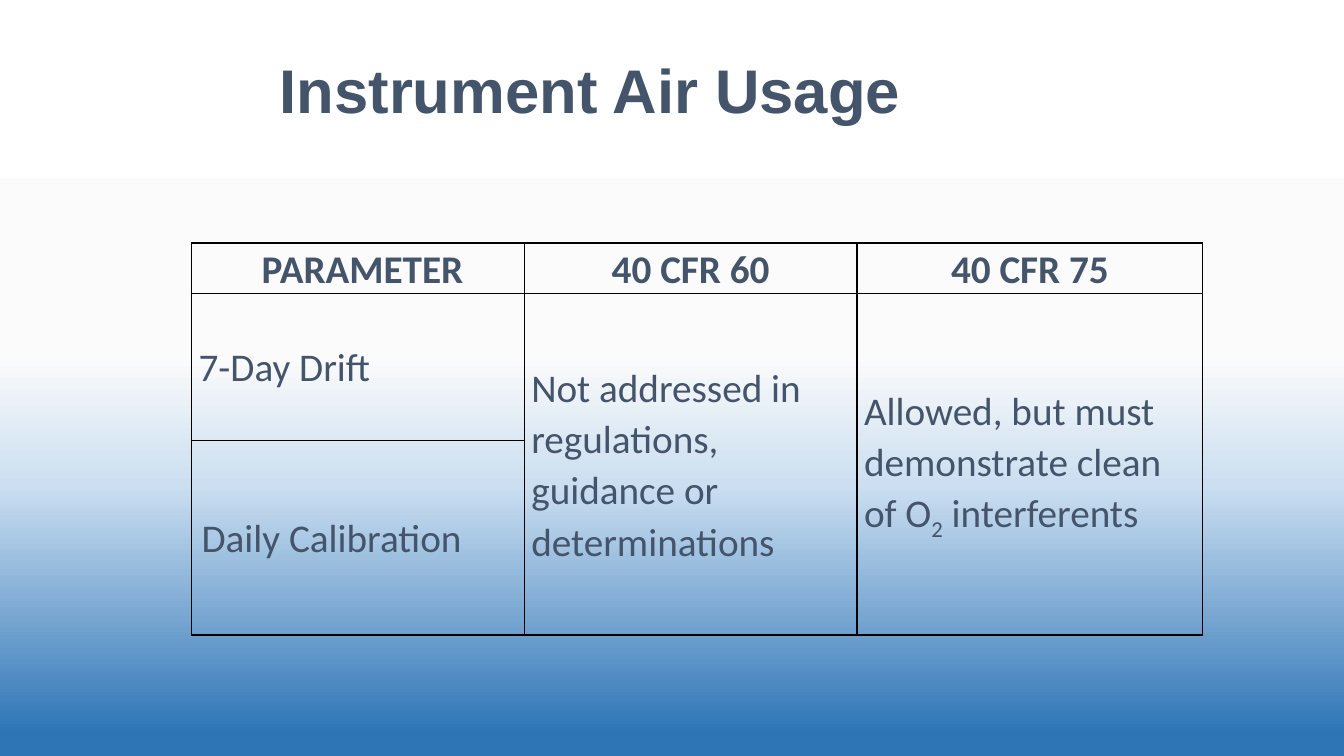
import pptx
import pptx.util
import pptx.oxml
import pptx.oxml.ns
import pptx.dml.color
import pptx.enum.text
from lxml import etree

Inches = pptx.util.Inches
Pt = pptx.util.Pt
qn = pptx.oxml.ns.qn
ALIGN = pptx.enum.text.PP_ALIGN
ANCHOR = pptx.enum.text.MSO_ANCHOR
SLATE = "44546A"


def color(hex_code):
    return pptx.dml.color.RGBColor.from_string(hex_code)


def write(frame, text, size=28, font="Calibri", bold=False, align=ALIGN.LEFT, spacing=1.07):
    """Fill the frame's first paragraph; text between ~ marks is subscript."""
    paragraph = frame.paragraphs[0]
    paragraph.alignment = align
    paragraph.line_spacing = spacing
    for index, part in enumerate(text.split("~")):
        run = paragraph.add_run()
        run.text = part
        run.font.size = Pt(size)
        run.font.name = font
        run.font.bold = bold
        run.font.color.rgb = color(SLATE)
        if index % 2:
            run.font._element.set("baseline", "-25000")


presentation = pptx.Presentation()
presentation.slide_width = Inches(13.33)
presentation.slide_height = Inches(7.5)
slide = presentation.slides.add_slide(presentation.slide_layouts[6])

# Background gradient, white at the top to blue at the bottom
background = slide.background.fill
background.gradient()
background.gradient_angle = 270
stops = slide.element.find(".//" + qn("a:gsLst"))
for stop in list(stops):
    stops.remove(stop)
for position, hex_code, opacity in [(0, "FFFFFF", 100), (47, "FBFBFB", 100),
                                    (64, "CCDFF1", 100), (97, "2E75B6", 78)]:
    stop = etree.SubElement(stops, qn("a:gs"), pos=str(position * 1000))
    stop_color = etree.SubElement(stop, qn("a:srgbClr"), val=hex_code)
    if opacity < 100:
        etree.SubElement(stop_color, qn("a:alpha"), val=str(opacity * 1000))

# Title
title = slide.shapes.add_textbox(Inches(0.71), Inches(0.5), Inches(10.29), Inches(0.86)).text_frame
title.word_wrap = True
title.vertical_anchor = ANCHOR.MIDDLE
write(title, "Instrument Air Usage", size=44, font="Arial", bold=True,
      align=ALIGN.CENTER, spacing=0.9)

# Table grid
table = slide.shapes.add_table(3, 3, Inches(1.9), Inches(2.41), Inches(10.03), Inches(3.86)).table
table.first_row = False
table.horz_banding = False
for column, width in zip(table.columns, [3.3, 3.3, 3.43]):
    column.width = Inches(width)
for row, height in zip(table.rows, [0.47, 1.46, 1.93]):
    row.height = Inches(height)

# Cell margins, clear fills and black borders
for cell in table.iter_cells():
    cell.margin_left = cell.margin_right = Inches(0.07)
    cell.margin_top = cell.margin_bottom = 0
    properties = cell._tc.get_or_add_tcPr()
    for side in ["a:lnL", "a:lnR", "a:lnT", "a:lnB"]:
        border = etree.SubElement(properties, qn(side), w=str(Pt(1)))
        border_fill = etree.SubElement(border, qn("a:solidFill"))
        etree.SubElement(border_fill, qn("a:srgbClr"), val="000000")
    cell.fill.background()

# Header row
for index, heading in enumerate(["PARAMETER", "40 CFR 60", "40 CFR 75"]):
    write(table.cell(0, index).text_frame, heading, bold=True, align=ALIGN.CENTER)
table.cell(0, 0).margin_left = Inches(0.16)

# Body cells; the two rule columns span both parameters
for index in [1, 2]:
    table.cell(1, index).merge(table.cell(2, index))
for row, column, text in [
    (1, 0, "7-Day Drift"),
    (2, 0, "Daily Calibration"),
    (1, 1, "Not addressed in regulations, guidance or determinations"),
    (1, 2, "Allowed, but must demonstrate clean of O~2~ interferents"),
]:
    cell = table.cell(row, column)
    cell.vertical_anchor = ANCHOR.MIDDLE
    write(cell.text_frame, text)

calibration = table.cell(2, 0)
calibration.margin_left = calibration.margin_right = Inches(0.1)
calibration.margin_top = calibration.margin_bottom = Inches(0.05)

presentation.save("out.pptx")
